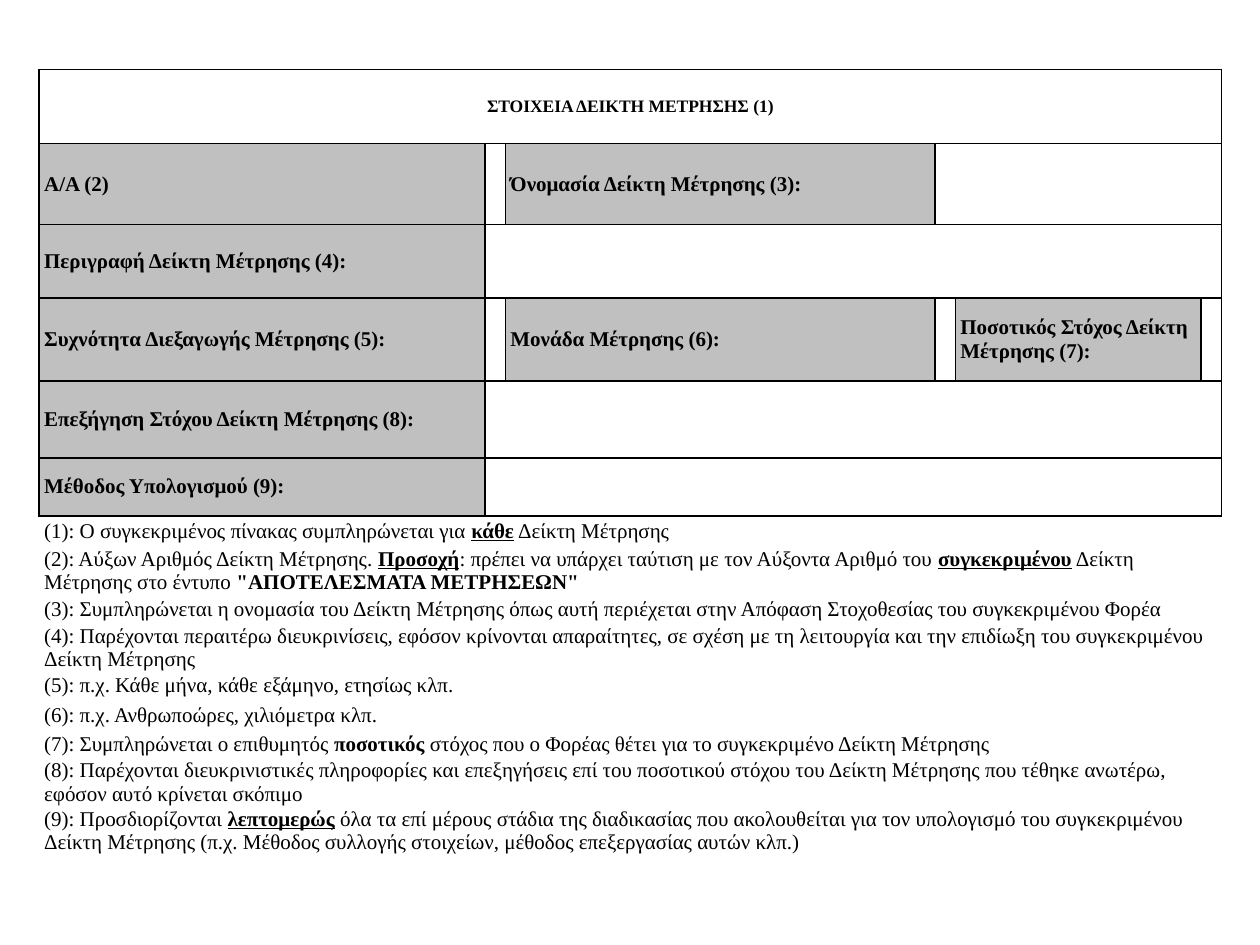
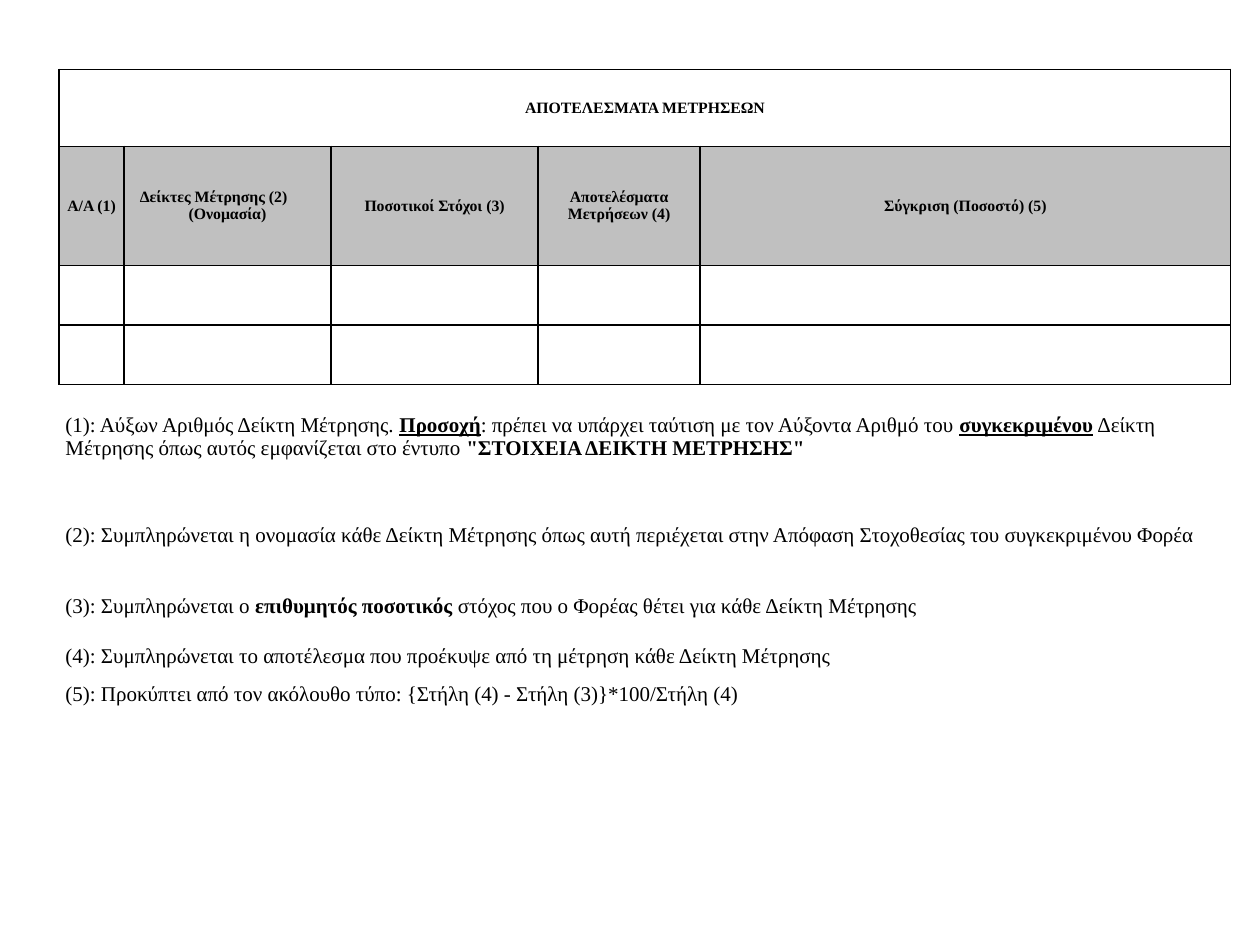
from lxml.etree import SubElement
from pptx import Presentation
from pptx.dml.color import RGBColor
from pptx.enum.text import MSO_ANCHOR, PP_ALIGN
from pptx.oxml.ns import qn
from pptx.util import Cm, Pt

BLACK = RGBColor(0x00, 0x00, 0x00)
LABEL_GREY = RGBColor(0xC0, 0xC0, 0xC0)
BASE_FONT = {"name": "Times New Roman", "bold": False, "underline": False}
STRONG = {"bold": True}
KEYWORD = {"bold": True, "underline": True}
TOP = Cm(1.4)


def add_form(slide, left, widths, heights, ruled_rows, margin, merge_starts):
    """Add a ruled form whose rows after ruled_rows are open note rows."""
    form = slide.shapes.add_table(len(heights), len(widths), left, TOP,
                                  Cm(sum(widths)), Cm(sum(heights))).table
    form.first_row = form.horz_banding = False
    for column, width in zip(form.columns, widths):
        column.width = Cm(width)
    for row, height in zip(form.rows, heights):
        row.height = Cm(height)
    for r in range(len(heights)):
        ruled_sides = "LRTB" if r < ruled_rows else "T" if r == ruled_rows else ""
        for c in range(len(widths)):
            cell = form.cell(r, c)
            cell_format = {"margin_left": margin, "margin_right": margin,
                           "margin_top": 0, "margin_bottom": 0,
                           "vertical_anchor": MSO_ANCHOR.MIDDLE}
            for name, value in cell_format.items():
                setattr(cell, name, value)
            properties = cell._tc.get_or_add_tcPr()
            for side in "LRTB":
                line = SubElement(properties, qn(f"a:ln{side}"), w=str(Pt(1)))
                if side in ruled_sides:
                    fill = SubElement(line, qn("a:solidFill"))
                    SubElement(fill, qn("a:srgbClr"), val=str(BLACK))
                else:
                    SubElement(line, qn("a:noFill"))
            cell.fill.background()
    # Merged areas run to the last column
    note_starts = [(r, 0) for r in range(ruled_rows, len(heights))]
    for r, c in merge_starts + note_starts:
        form.cell(r, c).merge(form.cell(r, len(widths) - 1))
    return form


def write(paragraph, pieces, size, align=PP_ALIGN.LEFT):
    """Write text pieces, each a plain string or a (text, format) pair."""
    paragraph.alignment = align
    for piece in pieces:
        text, emphasis = (piece, {}) if isinstance(piece, str) else piece
        run = paragraph.add_run()
        run.text = text
        run.font.color.rgb = BLACK
        for name, value in {**BASE_FONT, "size": Pt(size), **emphasis}.items():
            setattr(run.font, name, value)


presentation = Presentation()
presentation.slide_width = Cm(25.4)
presentation.slide_height = Cm(19.05)
blank_layout = presentation.slide_layouts[6]

# Slide 1: indicator details
details_slide = presentation.slides.add_slide(blank_layout)
details = add_form(
    details_slide, Cm(0.79),
    widths=[8.99, 0.41, 8.66, 0.41, 4.95, 0.41],
    heights=[1.49, 1.64, 1.48, 1.67, 1.55, 1.17,
             0.61, 0.99, 0.59, 0.94, 0.59, 0.59, 0.59, 0.94, 1.02],
    ruled_rows=6, margin=Cm(0.1),
    merge_starts=[(0, 0), (1, 3), (2, 1), (4, 1), (5, 1)])
write(details.cell(0, 0).text_frame.paragraphs[0],
      [("ΣΤΟΙΧΕΙΑ ΔΕΙΚΤΗ ΜΕΤΡΗΣΗΣ (1)", STRONG)], 10, PP_ALIGN.CENTER)

# Grey field labels
field_labels = {
    (1, 0): "Α/Α (2)",
    (1, 2): "Όνομασία Δείκτη Μέτρησης (3):",
    (2, 0): "Περιγραφή Δείκτη Μέτρησης (4):",
    (3, 0): "Συχνότητα Διεξαγωγής Μέτρησης (5):",
    (3, 2): "Μονάδα Μέτρησης (6):",
    (3, 4): "Ποσοτικός Στόχος Δείκτη Μέτρησης (7):",
    (4, 0): "Επεξήγηση Στόχου Δείκτη Μέτρησης (8):",
    (5, 0): "Μέθοδος Υπολογισμού (9):",
}
for (r, c), label in field_labels.items():
    field = details.cell(r, c)
    field.fill.solid()
    field.fill.fore_color.rgb = LABEL_GREY
    write(field.text_frame.paragraphs[0], [(label, STRONG)], 12)

# Notes on the fields
match_number = [("Προσοχή", KEYWORD),
                ": πρέπει να υπάρχει ταύτιση με τον Αύξοντα Αριθμό του ",
                ("συγκεκριμένου", KEYWORD)]
details_notes = [
    ["(1): Ο συγκεκριμένος πίνακας συμπληρώνεται για ", ("κάθε", KEYWORD),
     " Δείκτη Μέτρησης"],
    ["(2): Αύξων Αριθμός Δείκτη Μέτρησης. ", *match_number,
     " Δείκτη Μέτρησης στο έντυπο ", ('"ΑΠΟΤΕΛΕΣΜΑΤΑ ΜΕΤΡΗΣΕΩΝ"', STRONG)],
    ["(3): Συμπληρώνεται η ονομασία του Δείκτη Μέτρησης όπως αυτή περιέχεται "
     "στην Απόφαση Στοχοθεσίας του συγκεκριμένου Φορέα"],
    ["(4): Παρέχονται περαιτέρω διευκρινίσεις, εφόσον κρίνονται απαραίτητες, σε "
     "σχέση με τη λειτουργία και την επιδίωξη του συγκεκριμένου Δείκτη Μέτρησης"],
    ["(5): π.χ. Κάθε μήνα, κάθε εξάμηνο, ετησίως κλπ."],
    ["(6): π.χ. Ανθρωποώρες, χιλιόμετρα κλπ."],
    ["(7): Συμπληρώνεται ο επιθυμητός ", ("ποσοτικός", STRONG),
     " στόχος που ο Φορέας θέτει για το συγκεκριμένο Δείκτη Μέτρησης"],
    ["(8): Παρέχονται διευκρινιστικές πληροφορίες και επεξηγήσεις επί του "
     "ποσοτικού στόχου του Δείκτη Μέτρησης που τέθηκε ανωτέρω, εφόσον αυτό "
     "κρίνεται σκόπιμο"],
    ["(9): Προσδιορίζονται ", ("λεπτομερώς", KEYWORD),
     " όλα τα επί μέρους στάδια της διαδικασίας που ακολουθείται για τον "
     "υπολογισμό του συγκεκριμένου Δείκτη Μέτρησης (π.χ. Μέθοδος συλλογής "
     "στοιχείων, μέθοδος επεξεργασίας αυτών κλπ.)"],
]

# Slide 2: measurement results
results_slide = presentation.slides.add_slide(blank_layout)
results = add_form(
    results_slide, Cm(1.19),
    widths=[1.31, 4.17, 4.18, 3.26, 10.7],
    heights=[1.55, 2.4, 1.2, 1.2, 2.13, 1.82, 1.07, 0.94, 0.56],
    ruled_rows=4, margin=Cm(0.13), merge_starts=[(0, 0)])
write(results.cell(0, 0).text_frame.paragraphs[0],
      [("ΑΠΟΤΕΛΕΣΜΑΤΑ ΜΕΤΡΗΣΕΩΝ", STRONG)], 9, PP_ALIGN.CENTER)

# Grey column headings
headings = ["Α/Α (1)", "Δείκτες Μέτρησης (2)", "Ποσοτικοί Στόχοι (3)",
            "Αποτελέσματα Μετρήσεων (4)", "Σύγκριση (Ποσοστό) (5)"]
for c, heading in enumerate(headings):
    heading_cell = results.cell(1, c)
    heading_cell.fill.solid()
    heading_cell.fill.fore_color.rgb = LABEL_GREY
    write(heading_cell.text_frame.paragraphs[0], [(heading, STRONG)], 9,
          PP_ALIGN.CENTER)

# The second heading sits left of centre, its second line is centred
heading_shift = Cm(0.56)
indicator_cell = results.cell(1, 1)
indicator_cell.margin_right += heading_shift
name_line = indicator_cell.text_frame.add_paragraph()
write(name_line, [("(Ονομασία)", STRONG)], 9, PP_ALIGN.CENTER)
name_line._p.get_or_add_pPr().set("marL", str(heading_shift))

# Notes on the columns
results_notes = [
    ["(1): Αύξων Αριθμός Δείκτη Μέτρησης. ", *match_number,
     " Δείκτη Μέτρησης όπως αυτός εμφανίζεται στο έντυπο ",
     ('"ΣΤΟΙΧΕΙΑ ΔΕΙΚΤΗ ΜΕΤΡΗΣΗΣ"', STRONG)],
    ["(2): Συμπληρώνεται η ονομασία κάθε Δείκτη Μέτρησης όπως αυτή περιέχεται "
     "στην Απόφαση Στοχοθεσίας του συγκεκριμένου Φορέα"],
    ["(3): Συμπληρώνεται ο ", ("επιθυμητός ποσοτικός", STRONG),
     " στόχος που ο Φορέας θέτει για κάθε Δείκτη Μέτρησης"],
    ["(4): Συμπληρώνεται το αποτέλεσμα που προέκυψε από τη μέτρηση κάθε Δείκτη "
     "Μέτρησης"],
    ["(5): Προκύπτει από τον ακόλουθο τύπο: {Στήλη (4) - Στήλη (3)}*100/Στήλη (4)"],
]

# Both note lists fill the open rows of their form
for form, first_row, notes in [(details, 6, details_notes),
                               (results, 4, results_notes)]:
    for r, note in enumerate(notes, first_row):
        write(form.cell(r, 0).text_frame.paragraphs[0], note, 12)

presentation.save("out.pptx")
